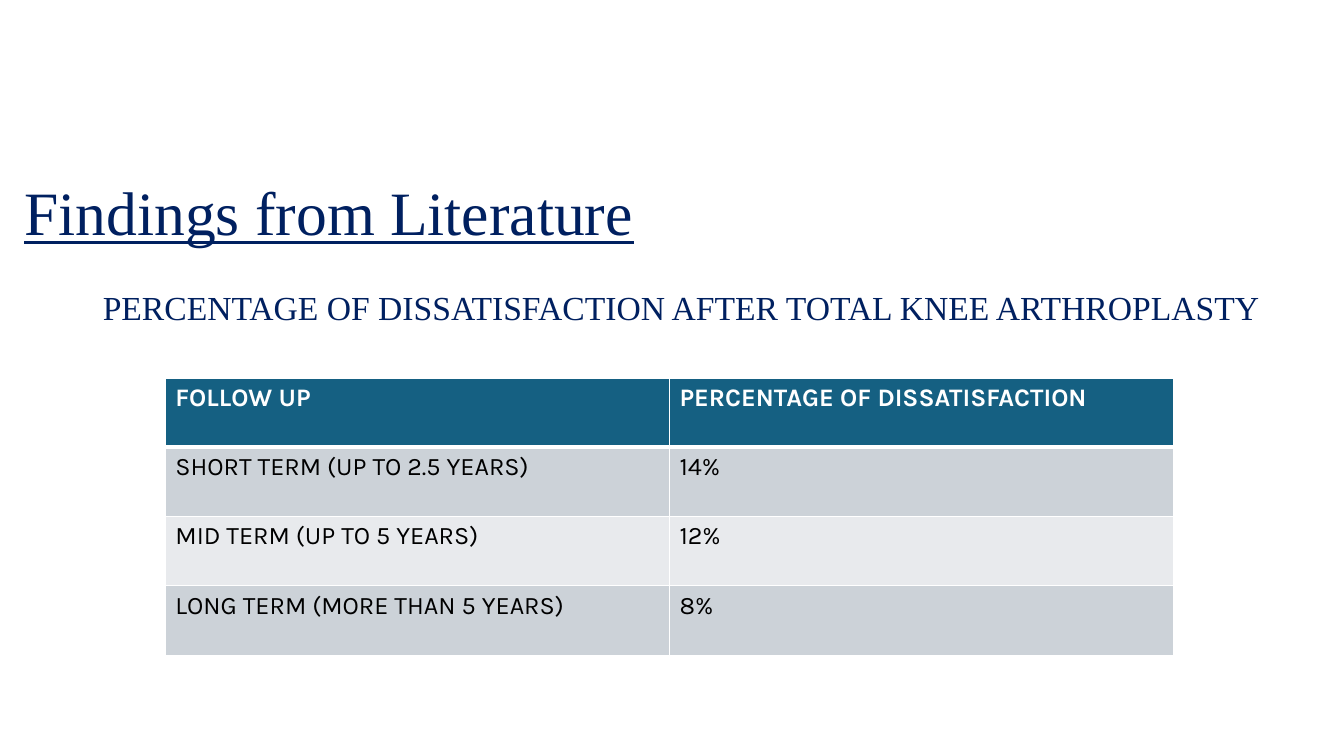
import pptx
import pptx.dml.color
import pptx.enum.text
import pptx.oxml
import pptx.oxml.ns
import pptx.util
from dataclasses import dataclass


@dataclass(frozen=True)
class Theme:
    navy: str = "002060"
    header: str = "156082"
    bands: tuple = ("CCD2D8", "E8EAED")
    white: str = "FFFFFF"
    black: str = "000000"
    serif: str = "Times New Roman"
    sans: str = "Karla"
    title_size: int = 44
    subtitle_size: int = 24
    table_size: int = 18


theme = Theme()
ALIGN = pptx.enum.text.PP_ALIGN
inch = pptx.util.Inches


def style(p, font, size, color, bold=False, underline=False):
    for r in p.runs:
        r.font.name = font
        r.font.size = pptx.util.Pt(size)
        r.font.bold = bold
        r.font.underline = underline
        r.font.color.rgb = pptx.dml.color.RGBColor.from_string(color)


def add_border(cell, side, points):
    cell._tc.get_or_add_tcPr().append(pptx.oxml.parse_xml(
        f'<a:ln{side} {pptx.oxml.ns.nsdecls("a")} w="{pptx.util.Pt(points)}">'
        f'<a:solidFill><a:srgbClr val="{theme.white}"/></a:solidFill></a:ln{side}>'))


prs = pptx.Presentation()
prs.slide_width, prs.slide_height = inch(13.33), inch(7.5)
s = prs.slides.add_slide(prs.slide_layouts[5])

# Title
sp = s.shapes.title
sp.left, sp.top, sp.width, sp.height = inch(0.14), inch(1.72), inch(11.5), inch(1.45)
tf = sp.text_frame
tf.text = "Findings from Literature"
tf.auto_size = pptx.enum.text.MSO_AUTO_SIZE.NONE
tf.vertical_anchor = pptx.enum.text.MSO_ANCHOR.TOP
tf.margin_top = inch(0.09)
p = tf.paragraphs[0]
p.alignment, p.line_spacing = ALIGN.LEFT, 0.9
style(p, theme.serif, theme.title_size, theme.navy, underline=True)

# Subtitle
sp = s.shapes.add_textbox(inch(0.17), inch(2.84), inch(13.17), inch(0.76))
tf = sp.text_frame
tf.word_wrap = True
tf.text = "PERCENTAGE OF DISSATISFACTION AFTER TOTAL KNEE ARTHROPLASTY"
p = tf.paragraphs[0]
p.alignment, p.line_spacing = ALIGN.CENTER, 0.9
style(p, theme.serif, theme.subtitle_size, theme.navy)

# Follow-up table
rows = [
    ("FOLLOW UP", "PERCENTAGE OF DISSATISFACTION"),
    ("SHORT TERM (UP TO 2.5 YEARS)", "14%"),
    ("MID TERM (UP TO 5 YEARS)", "12%"),
    ("LONG TERM (MORE THAN 5 YEARS)", "8%"),
]
table = s.shapes.add_table(len(rows), len(rows[0]), inch(1.64), inch(3.75),
                           inch(10), inch(2.75)).table
for i, row in enumerate(rows):
    is_header = i == 0
    fill = theme.header if is_header else theme.bands[(i - 1) % 2]
    widths = {"L": 1, "R": 1, "T": 3 if i == 1 else 1, "B": 3 if is_header else 1}
    for j, text in enumerate(row):
        cell = table.cell(i, j)
        cell.text = text
        style(cell.text_frame.paragraphs[0], theme.sans, theme.table_size,
              theme.white if is_header else theme.black, bold=is_header)
        for side, points in widths.items():
            add_border(cell, side, points)
        cell.fill.solid()
        cell.fill.fore_color.rgb = pptx.dml.color.RGBColor.from_string(fill)

prs.save("out.pptx")
